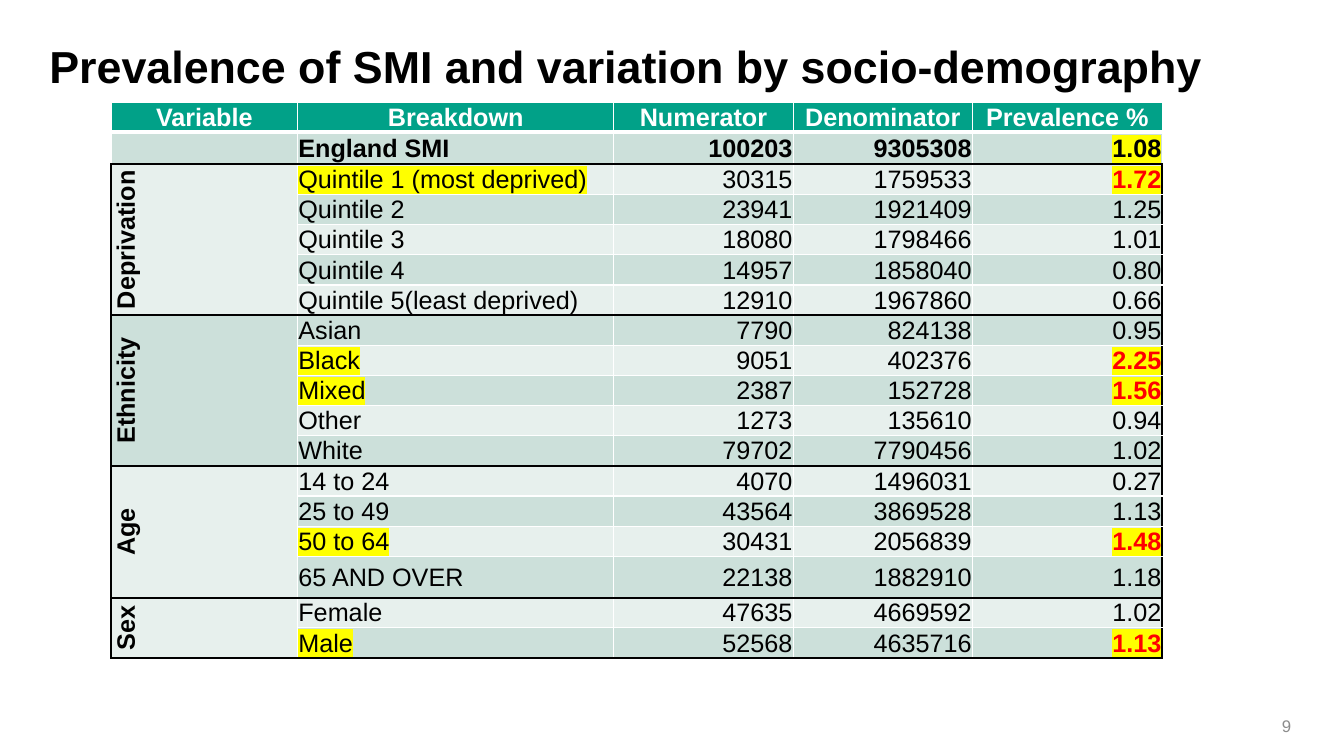
from lxml.etree import SubElement
from pptx import Presentation
from pptx.dml.color import RGBColor
from pptx.enum.text import MSO_ANCHOR as Anchor, PP_ALIGN as Align
from pptx.oxml.ns import qn
from pptx.util import Cm, Pt

HEADERS = ["Variable", "Breakdown", "Numerator", "Denominator", "Prevalence %"]
ENGLAND = ["", "England SMI", "100203", "9305308", "1.08"]
GROUPS = {
    "Deprivation": [
        ("Quintile 1 (most deprived)", "30315", "1759533", "1.72"),
        ("Quintile 2", "23941", "1921409", "1.25"),
        ("Quintile 3", "18080", "1798466", "1.01"),
        ("Quintile 4", "14957", "1858040", "0.80"),
        ("Quintile 5(least deprived)", "12910", "1967860", "0.66"),
    ],
    "Ethnicity": [
        ("Asian", "7790", "824138", "0.95"),
        ("Black", "9051", "402376", "2.25"),
        ("Mixed", "2387", "152728", "1.56"),
        ("Other", "1273", "135610", "0.94"),
        ("White", "79702", "7790456", "1.02"),
    ],
    "Age": [
        ("14 to 24", "4070", "1496031", "0.27"),
        ("25 to 49", "43564", "3869528", "1.13"),
        ("50 to 64", "30431", "2056839", "1.48"),
        ("65 AND OVER", "22138", "1882910", "1.18"),
    ],
    "Sex": [
        ("Female", "47635", "4669592", "1.02"),
        ("Male", "52568", "4635716", "1.13"),
    ],
}
HIGH_PREVALENCE = {"Quintile 1 (most deprived)", "Black", "Mixed", "50 to 64", "Male"}
COLUMN_WIDTHS = [4.7, 7.97, 4.52, 4.52, 4.78]
ROW_HEIGHT = 0.76
TALL_ROWS = {"England SMI": 0.81, "65 AND OVER": 1.04}
COLUMN_ALIGNS = [Align.CENTER, Align.LEFT, Align.RIGHT, Align.RIGHT, Align.RIGHT]
WHITE_LINE = ("FFFFFF", 1)
HEADER_LINE = ("FFFFFF", 3)
BLACK_LINE = ("000000", 1.5)


def color(value):
    return RGBColor.from_string(value)


class SlideBuilder:
    font = "Arial"
    black, white, red, gray = "000000", "FFFFFF", "FF0000", "8C8C8C"
    yellow, header_fill = "FFFF00", "01A188"
    bands = ["E7F0ED", "CCE0DA"]

    def __init__(self, presentation):
        self.slide = presentation.slides.add_slide(presentation.slide_layouts[5])

    def set_text(self, frame, text, size, ink, bold=False, align=Align.LEFT, highlight=None):
        paragraph = frame.paragraphs[0]
        paragraph.alignment = align
        paragraph.font.name = self.font
        paragraph.font.size = Pt(size)
        paragraph.font.bold = bold
        paragraph.font.color.rgb = color(ink)
        if text:
            run = paragraph.add_run()
            run.text = text
            if highlight:
                mark = SubElement(run._r.get_or_add_rPr(), qn("a:highlight"))
                SubElement(mark, qn("a:srgbClr"), val=highlight)
        return paragraph

    def title(self, text):
        title = self.slide.shapes.title
        title.left, title.top, title.width, title.height = Cm(0.99), Cm(0.99), Cm(31.8), Cm(2.34)
        title.text_frame.vertical_anchor = Anchor.TOP
        paragraph = self.set_text(title.text_frame, text, 32, self.black, bold=True)
        paragraph.line_spacing = 0.9

    def page_number(self, text):
        box = self.slide.shapes.add_textbox(Cm(30.68), Cm(17.65), Cm(2.11), Cm(1.02))
        box.text_frame.word_wrap = True
        box.text_frame.vertical_anchor = Anchor.BOTTOM
        self.set_text(box.text_frame, text, 12, self.gray, align=Align.RIGHT)

    def table(self, row_heights):
        frame = self.slide.shapes.add_table(
            len(row_heights), len(COLUMN_WIDTHS), Cm(2.8), Cm(2.57),
            Cm(sum(COLUMN_WIDTHS)), Cm(sum(row_heights)))
        table = frame.table
        table.horz_banding = False
        for column, width in zip(table.columns, COLUMN_WIDTHS):
            column.width = Cm(width)
        for row, height in zip(table.rows, row_heights):
            row.height = Cm(height)
        return table

    def cell(self, cell, text, fill, ink=black, bold=False, align=Align.LEFT, highlight=None,
             left=WHITE_LINE, right=WHITE_LINE, top=WHITE_LINE, bottom=WHITE_LINE):
        cell.margin_left = cell.margin_right = cell.margin_top = Cm(0.02)
        cell.margin_bottom = 0
        cell.vertical_anchor = Anchor.MIDDLE
        properties = cell._tc.get_or_add_tcPr()
        for side, (line_color, width) in zip("LRTB", (left, right, top, bottom)):
            line = SubElement(properties, qn(f"a:ln{side}"), w=str(Pt(width)))
            SubElement(SubElement(line, qn("a:solidFill")), qn("a:srgbClr"), val=line_color)
        cell.fill.solid()
        cell.fill.fore_color.rgb = color(fill)
        self.set_text(cell.text_frame, text, 18, ink, bold, align, highlight)

    def group(self, table, first, name, rows):
        last = first + len(rows) - 1
        for index, values in enumerate(rows, first):
            top = BLACK_LINE if index == first else WHITE_LINE
            bottom = BLACK_LINE if index == last else WHITE_LINE
            high = values[0] in HIGH_PREVALENCE
            for column, text in enumerate(values, 1):
                is_prevalence = column == len(values)
                marked = high and (column == 1 or is_prevalence)
                alert = high and is_prevalence
                self.cell(table.cell(index, column), text, self.bands[index % 2],
                          self.red if alert else self.black, alert, COLUMN_ALIGNS[column],
                          self.yellow if marked else None,
                          right=BLACK_LINE if is_prevalence else WHITE_LINE,
                          top=top, bottom=bottom)
        label = table.cell(first, 0)
        label.merge(table.cell(last, 0))
        self.cell(label, name, self.bands[first % 2], bold=True, align=Align.CENTER,
                  left=BLACK_LINE, top=BLACK_LINE, bottom=BLACK_LINE)
        label._tc.get_or_add_tcPr().set("vert", "vert270")


def main():
    presentation = Presentation()
    presentation.slide_width, presentation.slide_height = Cm(33.87), Cm(19.05)
    builder = SlideBuilder(presentation)
    builder.title("Prevalence of SMI and variation by socio-demography")

    names = [HEADERS[1], ENGLAND[1]] + [row[0] for rows in GROUPS.values() for row in rows]
    table = builder.table([TALL_ROWS.get(name, ROW_HEIGHT) for name in names])
    for column, (header, total) in enumerate(zip(HEADERS, ENGLAND)):
        builder.cell(table.cell(0, column), header, builder.header_fill, builder.white, True,
                     Align.CENTER, bottom=HEADER_LINE)
        builder.cell(table.cell(1, column), total, builder.bands[1], bold=True,
                     align=COLUMN_ALIGNS[column], top=HEADER_LINE, bottom=BLACK_LINE,
                     highlight=builder.yellow if column == len(HEADERS) - 1 else None)
    first = 2
    for name, rows in GROUPS.items():
        builder.group(table, first, name, rows)
        first += len(rows)

    builder.page_number("9")
    presentation.save("out.pptx")


if __name__ == "__main__":
    main()
